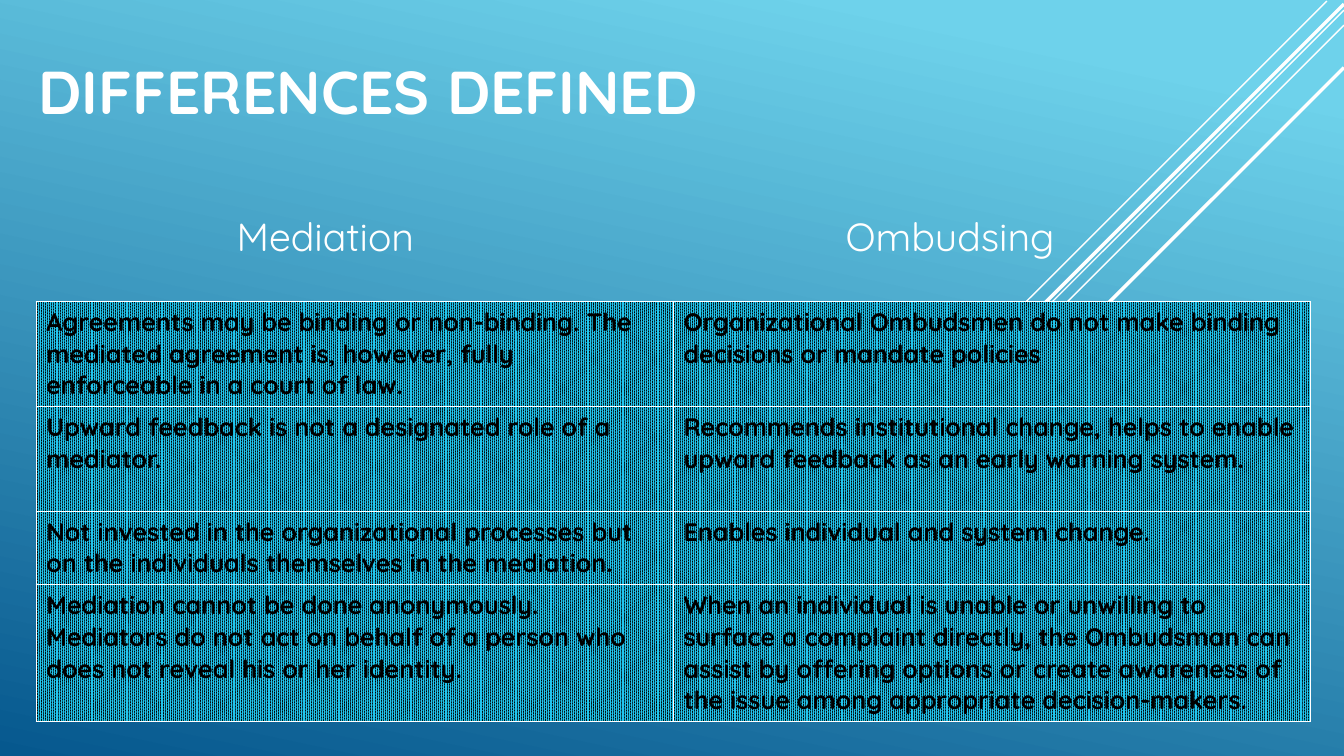
from lxml import etree
from pptx import Presentation
from pptx.dml.color import RGBColor
from pptx.enum import dml, shapes, text
from pptx.oxml import ns, parse_xml
from pptx.util import Inches, Pt

TITLE = "DIFFERENCES DEFINED"
HEADINGS = [("Mediation", 2.25, 4.26), ("Ombudsing", 8.29, 4.33)]
COMPARISON = [
    (1.04,
     "Agreements may be binding or non-binding. The mediated agreement is, however, "
     "fully enforceable in a court of law.",
     "Organizational Ombudsmen do not make binding decisions or mandate policies"),
    (1.04,
     "Upward feedback is not a designated role of a mediator.",
     "Recommends institutional change, helps to enable upward feedback as an early "
     "warning system."),
    (0.73,
     "Not invested in the organizational processes but on the individuals themselves "
     "in the mediation.",
     "Enables individual and system change."),
    (1.36,
     "Mediation cannot be done anonymously. Mediators do not act on behalf of a person "
     "who does not reveal his or her identity.",
     "When an individual is unable or unwilling to surface a complaint directly, the "
     "Ombudsman can assist by offering options or create awareness of the issue among "
     "appropriate decision-makers."),
]
RAYS = [
    (13.16, 0.01, 4.16, 1),
    (13.33, 0.1, 6.65, 1),
    (13.33, 0.25, 5.42, 1),
    (13.33, 0.04, 5.3, 2.5),
    (13.33, 0.67, 4.75, 2.5),
]

FONT = "Quicksand"
WHITE = RGBColor(0xFF, 0xFF, 0xFF)
BLACK = RGBColor(0, 0, 0)
CYAN = RGBColor(0x22, 0xC5, 0xED)
SKY = RGBColor(0x6E, 0xD2, 0xEB)
DEEP_BLUE = RGBColor(0x06, 0x58, 0x8E)


def write(frame, wording, size, color, bold=False):
    """Fill a text frame with one formatted left-aligned paragraph."""
    frame.text = wording
    frame.word_wrap = True
    paragraph = frame.paragraphs[0]
    paragraph.alignment = text.PP_ALIGN.LEFT
    font = paragraph.runs[0].font
    font.name, font.size, font.bold = FONT, Pt(size), bold
    font.color.rgb = color


def add_borders(cell):
    """Put a thin white line on all four sides of a cell."""
    properties = cell._tc.get_or_add_tcPr()
    for position, side in enumerate(("lnL", "lnR", "lnT", "lnB")):
        properties.insert(position, parse_xml(
            f'<a:{side} {ns.nsdecls("a")} w="{Pt(1)}"><a:solidFill>'
            f'<a:srgbClr val="{WHITE}"/></a:solidFill></a:{side}>'))


def paint_background(slide):
    """Give the slide its diagonal blue gradient."""
    fill = slide.background.fill
    fill.gradient()
    fill.gradient_angle = 360 - 102
    for stop, position, color in zip(fill.gradient_stops, (0.1, 1), (SKY, DEEP_BLUE)):
        stop.position = position
        stop.color.rgb = color


def add_rays(slide):
    """Draw the white diagonals, each falling to the left at 45 degrees."""
    for x, y, reach, weight in RAYS:
        ray = slide.shapes.add_connector(
            shapes.MSO_CONNECTOR.STRAIGHT,
            Inches(x), Inches(y), Inches(x - reach), Inches(y + reach))
        ray.line.color.rgb = WHITE
        ray.line.width = Pt(weight)
        etree.SubElement(ray._element.spPr, ns.qn("a:effectLst"))


def add_comparison(slide):
    """Build the two-column comparison table."""
    height = sum(row[0] for row in COMPARISON)
    table = slide.shapes.add_table(
        len(COMPARISON), 2, Inches(0.36), Inches(2.99),
        Inches(12.64), Inches(height)).table
    table.first_row = table.horz_banding = False
    for row, (row_height, *sides) in zip(table.rows, COMPARISON):
        row.height = Inches(row_height)
        for cell, wording in zip(row.cells, sides):
            write(cell.text_frame, wording, 18, BLACK, bold=True)
            cell.fill.patterned()
            cell.fill.pattern = dml.MSO_PATTERN.PERCENT_90
            cell.fill.fore_color.rgb = CYAN
            cell.fill.back_color.rgb = BLACK
            add_borders(cell)


def main():
    """Build and save the slide."""
    deck = Presentation()
    deck.slide_width, deck.slide_height = Inches(13.33), Inches(7.5)
    slide = deck.slides.add_slide(deck.slide_layouts[5])
    paint_background(slide)
    add_rays(slide)

    title = slide.shapes.title
    title.left, title.top = Inches(0.28), Inches(0.45)
    title.width, title.height = Inches(8.19), Inches(0.86)
    write(title.text_frame, TITLE, 43.2, WHITE, bold=True)
    title.text_frame.vertical_anchor = text.MSO_ANCHOR.BOTTOM
    title.text_frame.auto_size = text.MSO_AUTO_SIZE.NONE

    add_comparison(slide)
    for heading, left, width in HEADINGS:
        box = slide.shapes.add_textbox(
            Inches(left), Inches(2.06), Inches(width), Inches(0.57))
        write(box.text_frame, heading, 28, WHITE)
        box.text_frame.auto_size = text.MSO_AUTO_SIZE.SHAPE_TO_FIT_TEXT

    deck.save("out.pptx")


if __name__ == "__main__":
    main()
